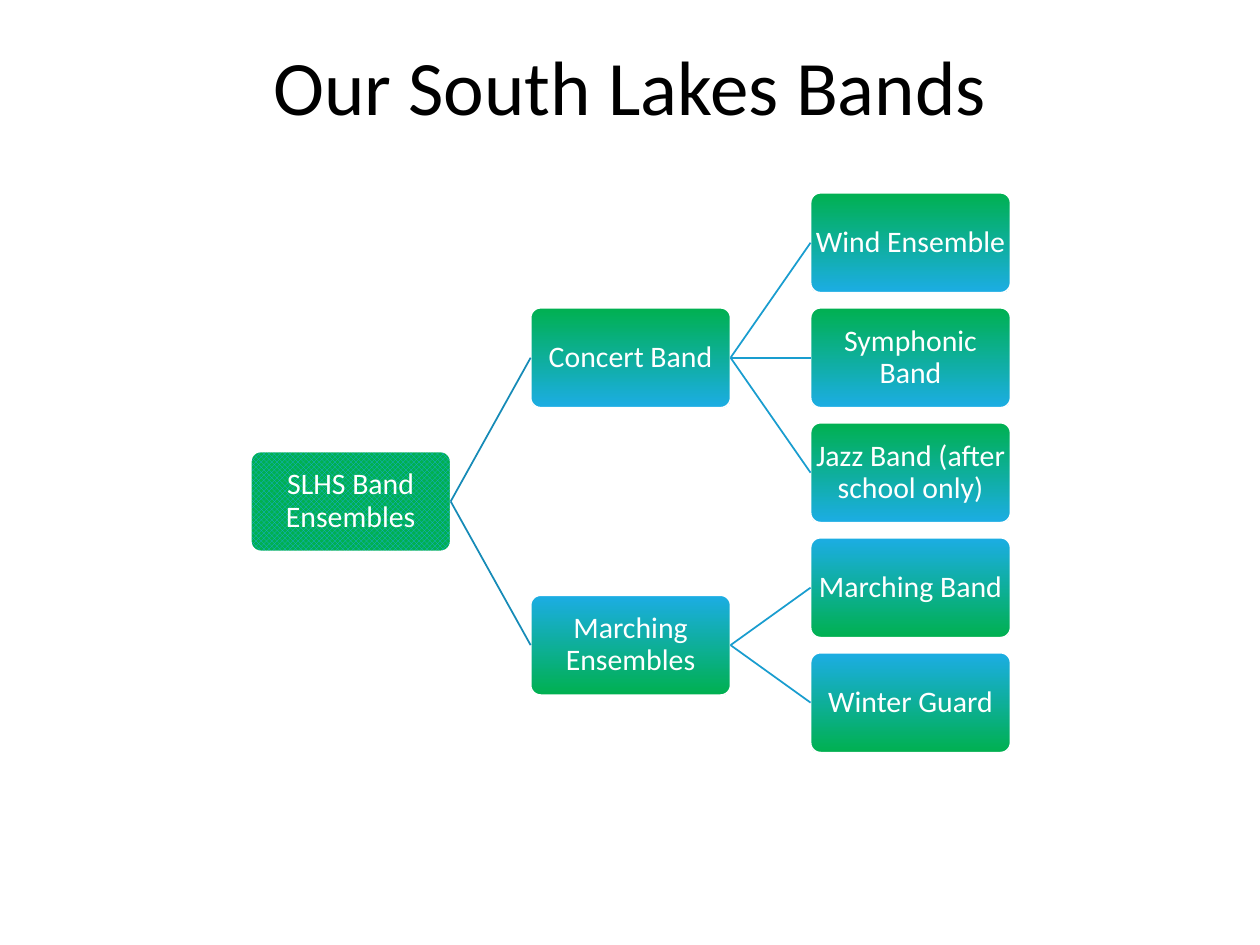
"""Build the South Lakes band tree slide."""
from lxml import etree
from pptx import Presentation, util as u
from pptx.dml.color import RGBColor
from pptx.enum import dml, shapes, text
from pptx.oxml import ns

TITLE = "Our South Lakes Bands"
ROOT = "SLHS Band Ensembles"
BRANCHES = [
    ("Concert Band", ("green", "blue"),
     ["Wind Ensemble", "Symphonic Band", "Jazz Band (after school only)"]),
    ("Marching Ensembles", ("blue", "green"),
     ["Marching Band", "Winter Guard"]),
]
COLORS = {name: RGBColor.from_string(value) for name, value in {
    "green": "00B050", "blue": "1CADE4", "white": "FFFFFF", "black": "000000",
    "root_link": "168BB7", "branch_link": "199DCF"}.items()}

SLIDE_WIDTH, SLIDE_HEIGHT = 10, 7.5
TREE_LEFT, TREE_TOP, TREE_WIDTH = 1.99, 1.53, 6.03
NODE_WIDTH = TREE_WIDTH / 3.8
NODE_HEIGHT = NODE_WIDTH / 2
COLUMN_STEP = NODE_WIDTH * 1.4
ROW_STEP = NODE_HEIGHT * 1.15


def write(shape, words, size, color, margins, anchor):
    frame = shape.text_frame
    frame.word_wrap = True
    frame.vertical_anchor = anchor
    frame.margin_left = frame.margin_right = u.Inches(margins[0])
    frame.margin_top = frame.margin_bottom = u.Inches(margins[1])
    paragraph = frame.paragraphs[0]
    paragraph.text = words
    paragraph.alignment = text.PP_ALIGN.CENTER
    paragraph.line_spacing = 0.9
    paragraph.font.name = "Calibri"
    paragraph.font.size = u.Pt(size)
    paragraph.font.color.rgb = COLORS[color]


def add_node(slide, words, column, row, gradient=None):
    left = TREE_LEFT + column * COLUMN_STEP
    top = TREE_TOP + row * ROW_STEP
    shape = slide.shapes.add_shape(
        shapes.MSO_SHAPE.ROUNDED_RECTANGLE,
        *map(u.Inches, (left, top, NODE_WIDTH, NODE_HEIGHT)))
    shape.adjustments[0] = 0.1
    shape.shadow.inherit = False
    shape.line.color.rgb = COLORS["white"]
    shape.line.width = u.Pt(1)
    if gradient:
        shape.fill.gradient()
        shape.fill.gradient_angle = 270
        for stop, color in zip(shape.fill.gradient_stops, gradient):
            stop.color.rgb = COLORS[color]
    else:
        shape.fill.patterned()
        shape.fill.pattern = dml.MSO_PATTERN.TRELLIS
        shape.fill.fore_color.rgb = COLORS["blue"]
        shape.fill.back_color.rgb = COLORS["green"]
    write(shape, words, 17, "white", (0.01, 0.01), text.MSO_ANCHOR.MIDDLE)
    return shape


def link(slide, parent, child, color):
    connector = slide.shapes.add_connector(
        shapes.MSO_CONNECTOR.STRAIGHT, 0, 0, 0, 0)
    connector.begin_connect(parent, 3)
    connector.end_connect(child, 1)
    connector.line.color.rgb = COLORS[color]
    connector.line.width = u.Pt(1)
    etree.SubElement(connector._element.spPr, ns.qn("a:effectLst"))


def main():
    presentation = Presentation()
    presentation.slide_width = u.Inches(SLIDE_WIDTH)
    presentation.slide_height = u.Inches(SLIDE_HEIGHT)
    slide = presentation.slides.add_slide(presentation.slide_layouts[6])

    title = slide.shapes.add_textbox(
        *map(u.Inches, (0.6, 0.12, 8.8, 0.98)))
    write(title, TITLE, 44, "black", (0.1, 0.05), text.MSO_ANCHOR.BOTTOM)

    branch_rows, first_row = [], 0
    for _, _, leaves in BRANCHES:
        branch_rows.append(first_row + (len(leaves) - 1) / 2)
        first_row += len(leaves)

    root = add_node(slide, ROOT, 0, sum(branch_rows) / len(branch_rows))
    leaf_row = 0
    for (name, gradient, leaves), row in zip(BRANCHES, branch_rows):
        branch = add_node(slide, name, 1, row, gradient)
        link(slide, root, branch, "root_link")
        for leaf_name in leaves:
            leaf = add_node(slide, leaf_name, 2, leaf_row, gradient)
            link(slide, branch, leaf, "branch_link")
            leaf_row += 1

    presentation.save("out.pptx")


if __name__ == "__main__":
    main()
